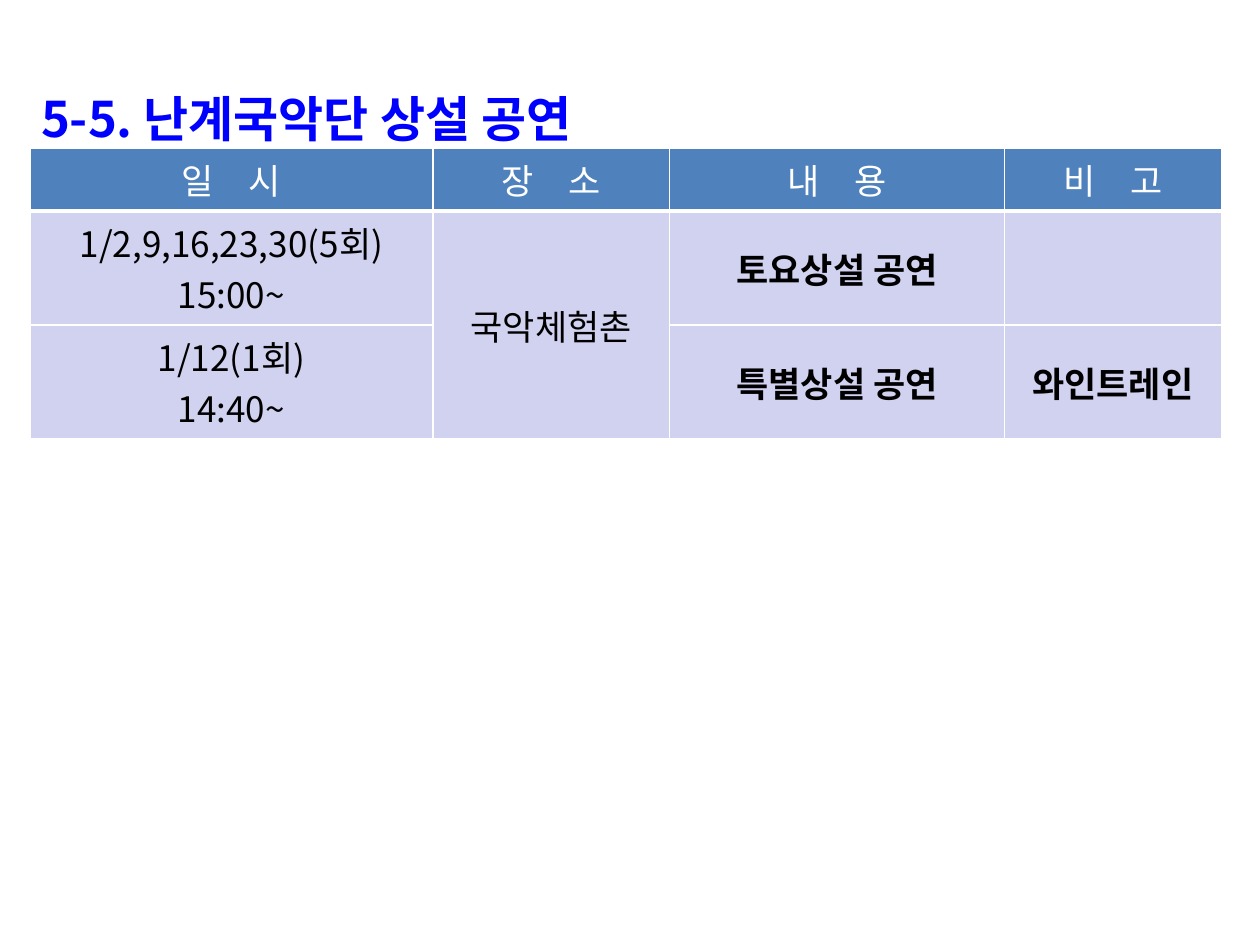
from lxml import etree
from pptx import Presentation, util as u
from pptx.dml.color import RGBColor
from pptx.enum import text
from pptx.oxml import ns

HEADINGS = ["일　시", "장　소", "내　용", "비　고"]
PERFORMANCES = [
    ["1/2,9,16,23,30(5회)\n15:00~", "국악체험촌", "토요상설 공연", ""],
    ["1/12(1회)\n14:40~", "", "특별상설 공연", "와인트레인"],
]
COLUMN_WIDTHS = [8.13, 4.77, 6.75, 4.37]
ROW_HEIGHTS = [1.27, 2.3, 2.3]


def colour(hex_code):
    return RGBColor.from_string(hex_code)


class ScheduleSlide:
    """Holds the style and the current slide of a performance schedule."""

    font_name = "Noto Sans CJK KR"
    title_blue, header_blue, body_fill = "0000FF", "4F81BD", "D1D1F0"
    white, black = "FFFFFF", "000000"

    def __init__(self, deck):
        self.slide = deck.slides.add_slide(deck.slide_layouts[6])

    def style(self, paragraph, size, hex_code, bold):
        font = paragraph.font
        font.size, font.bold = u.Pt(size), bold
        font.color.rgb = colour(hex_code)
        font.name = self.font_name
        defaults = paragraph._p.pPr.find(ns.qn("a:defRPr"))
        etree.SubElement(defaults, ns.qn("a:ea"), typeface=self.font_name)

    def title(self, wording, left, top, width, height):
        frame = self.slide.shapes.add_textbox(
            u.Cm(left), u.Cm(top), u.Cm(width), u.Cm(height)).text_frame
        frame.word_wrap = True
        heading = frame.paragraphs[0]
        heading.text, heading.line_spacing = wording, 1.4
        self.style(heading, 28, self.title_blue, True)

    def borders(self, cell, top, bottom):
        properties = cell._tc.get_or_add_tcPr()
        widths = {"lnL": 1, "lnR": 1, "lnT": top, "lnB": bottom}
        for position, (side, width) in enumerate(widths.items()):
            line = etree.Element(ns.qn(f"a:{side}"), w=str(u.Pt(width)))
            fill = etree.SubElement(line, ns.qn("a:solidFill"))
            etree.SubElement(fill, ns.qn("a:srgbClr"), val=self.white)
            properties.insert(position, line)

    def cell(self, cell, wording, row, bold):
        header = row == 0
        cell.fill.solid()
        cell.fill.fore_color.rgb = colour(self.header_blue if header else self.body_fill)
        cell.vertical_anchor = text.MSO_ANCHOR.MIDDLE
        self.borders(cell, 3 if row == 1 else 1, 3 if header else 1)
        cell.text = wording
        for paragraph in cell.text_frame.paragraphs:
            paragraph.alignment = text.PP_ALIGN.CENTER
            self.style(paragraph, 20, self.white if header else self.black, bold)

    def table(self, rows, widths, heights, left, top):
        schedule = self.slide.shapes.add_table(
            len(rows), len(widths), u.Cm(left), u.Cm(top),
            u.Cm(sum(widths)), u.Cm(sum(heights))).table
        schedule.horz_banding = False
        for column, width in zip(schedule.columns, widths):
            column.width = u.Cm(width)
        for row, height in zip(schedule.rows, heights):
            row.height = u.Cm(height)
        for r, entries in enumerate(rows):
            for c, wording in enumerate(entries):
                self.cell(schedule.cell(r, c), wording, r, r > 0 and c > 1)
        return schedule


def main():
    deck = Presentation()
    deck.slide_width, deck.slide_height = u.Cm(25.4), u.Cm(19.05)
    page = ScheduleSlide(deck)
    page.title("5-5. 난계국악단 상설 공연", 0.58, 1.19, 24.41, 7.14)
    schedule = page.table([HEADINGS, *PERFORMANCES], COLUMN_WIDTHS, ROW_HEIGHTS, 0.6, 2.98)
    schedule.cell(1, 1).merge(schedule.cell(2, 1))
    deck.save("out.pptx")


if __name__ == "__main__":
    main()
